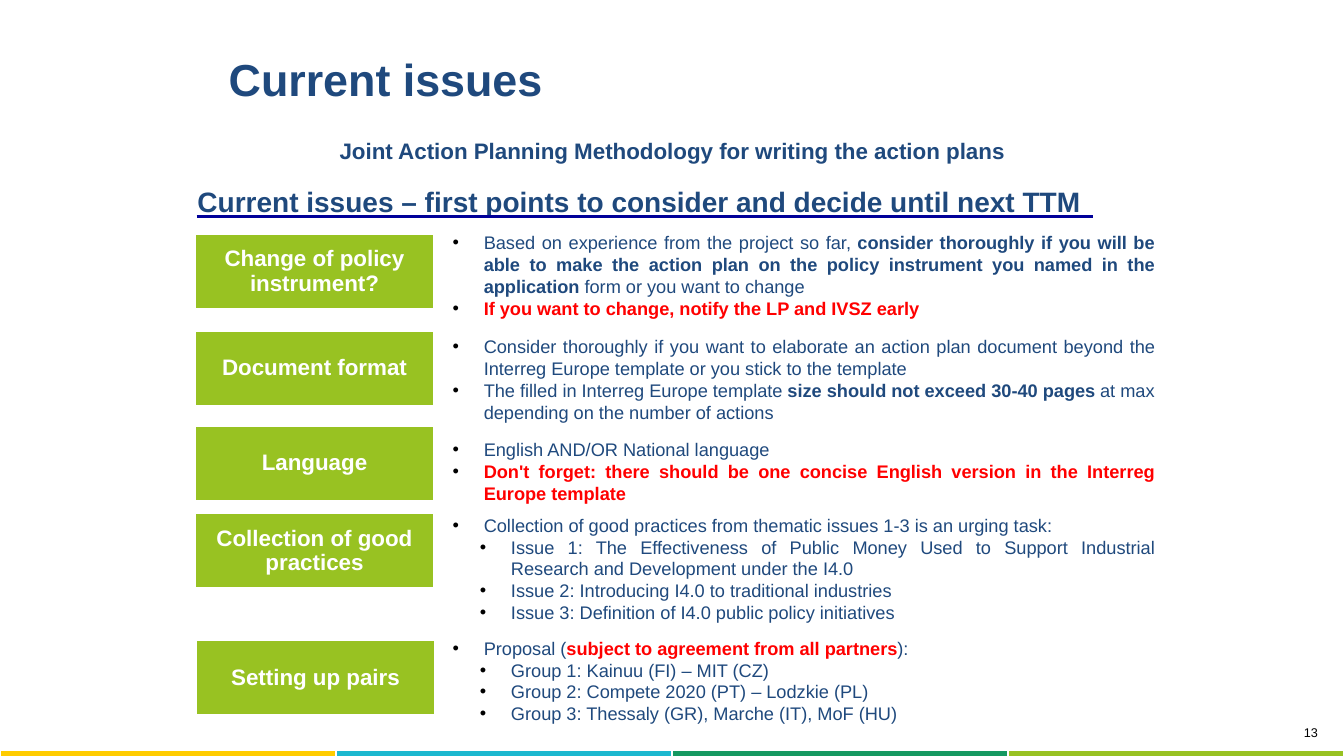
from lxml import etree
from pptx import Presentation
from pptx.dml.color import RGBColor
from pptx.enum import shapes, text
from pptx.oxml import ns
from pptx.util import Inches, Pt

NAVY, RED, GREEN, WHITE = "1F497D", "FF0000", "98C222", "FFFFFF"
PLAIN, BOLD, ALERT = (NAVY, False), (NAVY, True), (RED, True)
LEFT, CENTER = text.PP_ALIGN.LEFT, text.PP_ALIGN.CENTER
RIGHT, JUSTIFY = text.PP_ALIGN.RIGHT, text.PP_ALIGN.JUSTIFY
STRIPE_COLORS = ["FFCC00", "1CB8CF", "159961", GREEN]

# Each issue: label, label left, label top, points top, points (level, runs)
ISSUES = [
    ("Change of policy instrument?", 1.93, 2.32, 2.25, [
        (1, [("Based on experience from the project so far, ", PLAIN),
             ("consider thoroughly if you will be able to make the action plan "
              "on the policy instrument you named in the application ", BOLD),
             ("form or you want to change", PLAIN)]),
        (1, [("If you want to change, notify the LP and IVSZ early", ALERT)])]),
    ("Document format", 1.93, 3.28, 3.28, [
        (1, [("Consider thoroughly if you want to elaborate an action plan document "
              "beyond the Interreg Europe template or you stick to the template", PLAIN)]),
        (1, [("The filled in Interreg Europe template ", PLAIN),
             ("size should not exceed 30-40 pages ", BOLD),
             ("at max depending on the number of actions", PLAIN)])]),
    ("Language", 1.93, 4.22, 4.3, [
        (1, [("English AND/OR National language", PLAIN)]),
        (1, [("Don't forget: there should be one concise English version "
              "in the Interreg Europe template", ALERT)])]),
    ("Collection of good practices", 1.93, 5.09, 5.05, [
        (1, [("Collection of good practices from thematic issues 1-3 is an urging task:", PLAIN)]),
        (2, [("Issue 1: The Effectiveness of Public Money Used to Support Industrial "
              "Research and Development under the I4.0", PLAIN)]),
        (2, [("Issue 2: Introducing I4.0 to traditional industries", PLAIN)]),
        (2, [("Issue 3: Definition of I4.0 public policy initiatives", PLAIN)])]),
    ("Setting up pairs", 1.94, 6.35, 6.27, [
        (1, [("Proposal (", PLAIN), ("subject to agreement from all partners", ALERT),
             ("):", PLAIN)]),
        (2, [("Group 1: Kainuu (FI) – MIT (CZ)", PLAIN)]),
        (2, [("Group 2: Compete 2020 (PT) – Lodzkie (PL)", PLAIN)]),
        (2, [("Group 3: Thessaly (GR), Marche (IT), MoF (HU)", PLAIN)])]),
]


def rgb(color):
    """Turn a hex string into a colour."""
    return RGBColor.from_string(color)


def set_font(font, size, color, bold):
    """Set the face, size, colour and weight of a font."""
    font.name, font.size, font.bold = "Arial", Pt(size), bold
    font.color.rgb = rgb(color)


def add_text_frame(slide, box):
    """Add a wrapping text box and return its frame."""
    frame = slide.shapes.add_textbox(*map(Inches, box)).text_frame
    frame.word_wrap = True
    return frame


def add_line_of_text(slide, box, words, size, color=NAVY, bold=True, align=LEFT):
    """Add a text box holding one paragraph."""
    frame = add_text_frame(slide, box)
    paragraph = frame.paragraphs[0]
    paragraph.text, paragraph.alignment = words, align
    set_font(paragraph.font, size, color, bold)
    return frame


def add_bullet(paragraph, level):
    """Give a paragraph a black bullet with a hanging indent."""
    properties = paragraph._p.get_or_add_pPr()
    properties.set("marL", str(Inches(0.31 if level == 1 else 0.58)))
    properties.set("indent", str(Inches(-0.31)))
    color = etree.SubElement(properties, ns.qn("a:buClr"))
    etree.SubElement(color, ns.qn("a:srgbClr"), val="000000")
    etree.SubElement(properties, ns.qn("a:buFont"), typeface="Arial")
    etree.SubElement(properties, ns.qn("a:buChar"), char="•")


def add_points(slide, box, points):
    """Add the justified, bulleted points of an issue."""
    frame = add_text_frame(slide, box)
    for index, (level, runs) in enumerate(points):
        paragraph = frame.add_paragraph() if index else frame.paragraphs[0]
        paragraph.alignment, paragraph.level = JUSTIFY, level
        add_bullet(paragraph, level)
        styles = {style for _, style in runs}
        if len(styles) == 1:
            set_font(paragraph.font, 13, *styles.pop())
        for words, style in runs:
            run = paragraph.add_run()
            run.text = words
            if len(runs) > 1:
                set_font(run.font, 13, *style)


def add_label(slide, box, words):
    """Add the green label of an issue."""
    label = slide.shapes.add_shape(shapes.MSO_SHAPE.RECTANGLE, *map(Inches, box))
    label.shadow.inherit = False
    label.fill.solid()
    label.fill.fore_color.rgb = rgb(GREEN)
    label.line.color.rgb = rgb(WHITE)
    label.line.width = Pt(2)
    frame = label.text_frame
    frame.word_wrap = True
    frame.vertical_anchor = text.MSO_ANCHOR.MIDDLE
    frame.margin_left = frame.margin_right = Inches(0.06)
    frame.margin_top = frame.margin_bottom = Inches(0.06)
    paragraph = frame.paragraphs[0]
    paragraph.text, paragraph.alignment, paragraph.line_spacing = words, CENTER, 0.9
    set_font(paragraph.font, 16, WHITE, True)


def add_headings(slide, box):
    """Add the title, the methodology line and the underlined heading."""
    left, top, width, height = box
    title = add_line_of_text(slide, (left + 0.31, top, 7.33, 0.61), "Current issues", 32)
    title.vertical_anchor = text.MSO_ANCHOR.MIDDLE
    add_line_of_text(slide, (left + 0.81, top + 0.84, 8, 0.59),
                     "Joint Action Planning Methodology for writing the action plans",
                     16, align=CENTER)
    add_line_of_text(slide, (left, top + 1.31, width, 0.47),
                     "Current issues – first points to consider and decide until next TTM", 20)
    underline_y = Inches(top + height)
    underline = slide.shapes.add_connector(
        shapes.MSO_CONNECTOR.STRAIGHT, Inches(left + 0.09), underline_y,
        Inches(left + 8.98), underline_y)
    underline.line.color.rgb = rgb("000099")
    underline.line.width = Pt(2)
    etree.SubElement(underline._element.spPr, ns.qn("a:effectLst"))


def add_footer(slide, box):
    """Add the four-colour stripe and the page number above it."""
    left, top, width, height = box
    stripe = slide.shapes.add_table(1, len(STRIPE_COLORS), *map(Inches, box)).table
    for cell, color in zip(stripe.rows[0].cells, STRIPE_COLORS):
        cell.fill.solid()
        cell.fill.fore_color.rgb = rgb(color)
    add_line_of_text(slide, (left + width - 2.78, top - 0.3, 2.62, 0.31),
                     "13", 9, "000000", False, RIGHT)


def main():
    """Build and save the slide."""
    deck = Presentation()
    deck.slide_width, deck.slide_height = Inches(13.33), Inches(7.5)
    slide = deck.slides.add_slide(deck.slide_layouts[6])
    add_footer(slide, (0, 7.44, 13.33, 0.17))
    add_headings(slide, (1.86, 0.47, 9.37, 1.68))
    for label, label_left, label_top, points_top, points in ISSUES:
        add_label(slide, (label_left, label_top, 2.38, 0.75), label)
        add_points(slide, (4.39, points_top, 7.16, 0.59), points)
    deck.save("out.pptx")


if __name__ == "__main__":
    main()
